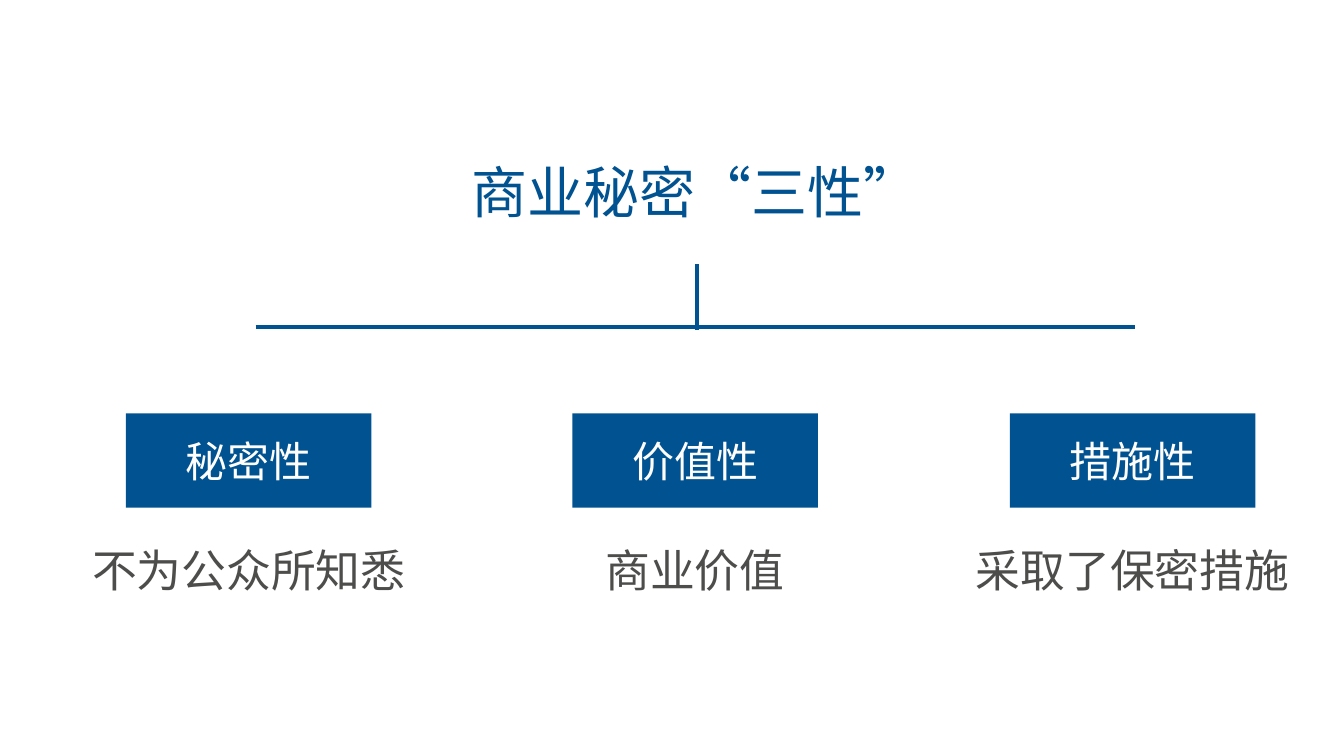
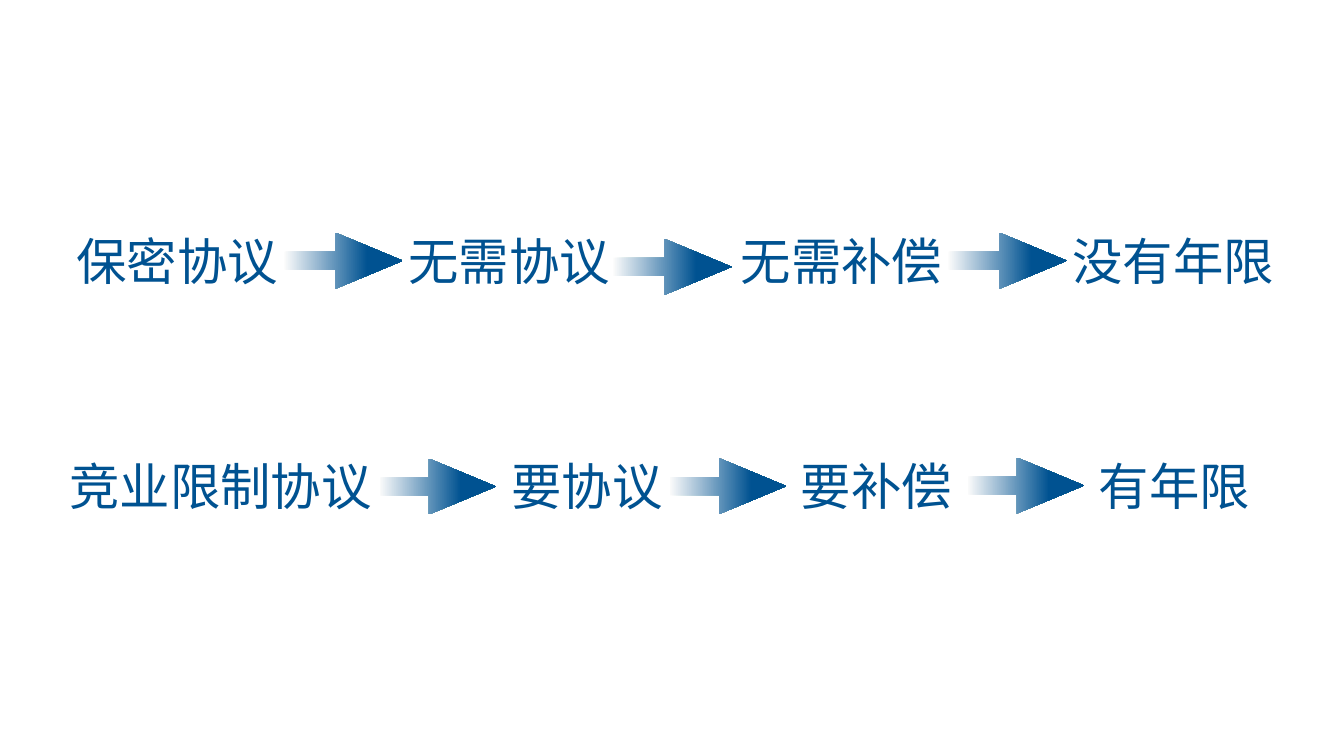
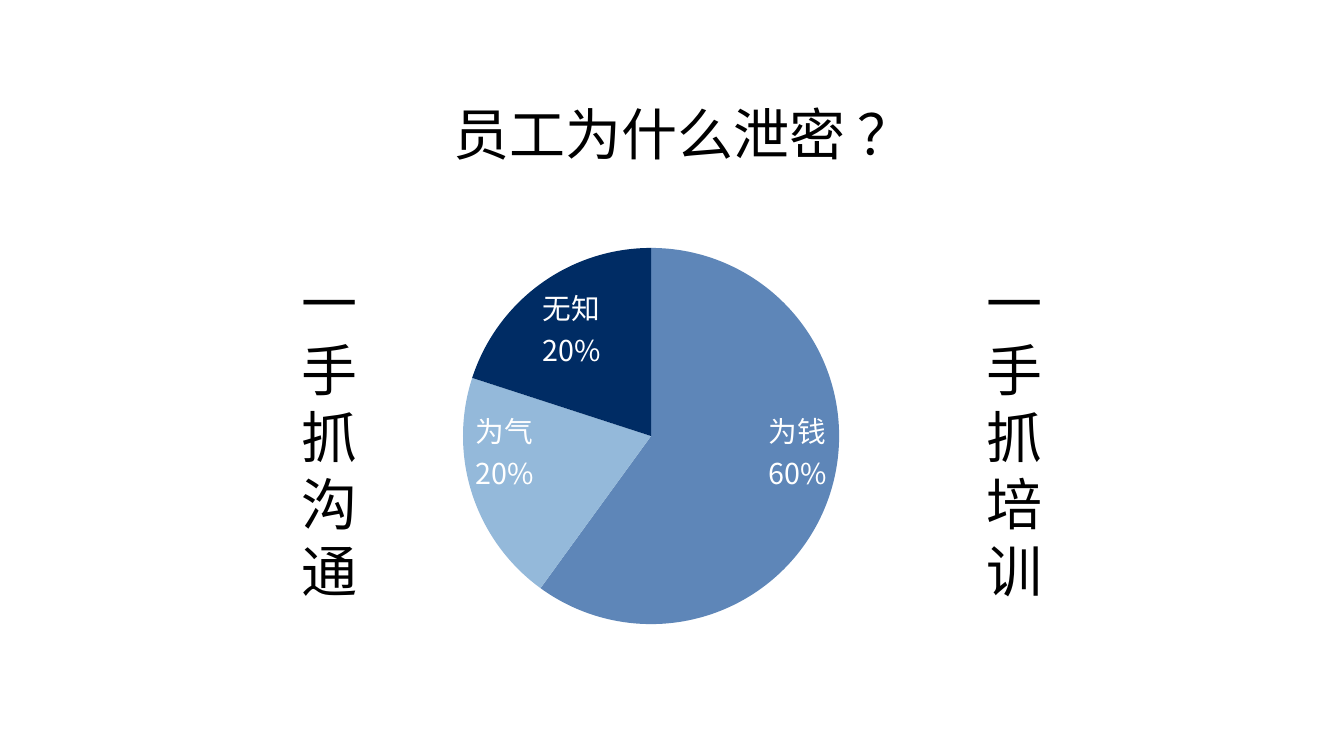
from lxml import etree
from pptx import Presentation
from pptx.chart.data import CategoryChartData
from pptx.dml.color import RGBColor
from pptx.enum.chart import XL_CHART_TYPE, XL_LABEL_POSITION
from pptx.enum.shapes import MSO_CONNECTOR, MSO_SHAPE
from pptx.enum.text import MSO_ANCHOR, MSO_AUTO_SIZE, PP_ALIGN
from pptx.oxml import parse_xml
from pptx.oxml.ns import nsdecls, qn
from pptx.util import Cm, Pt

PIE = XL_CHART_TYPE.PIE
INSIDE_END = XL_LABEL_POSITION.INSIDE_END
STRAIGHT = MSO_CONNECTOR.STRAIGHT
RECTANGLE, RIGHT_ARROW = MSO_SHAPE.RECTANGLE, MSO_SHAPE.RIGHT_ARROW
TOP, MIDDLE = MSO_ANCHOR.TOP, MSO_ANCHOR.MIDDLE
GROW = MSO_AUTO_SIZE.SHAPE_TO_FIT_TEXT
CENTER = PP_ALIGN.CENTER

FONT = "Noto Sans CJK SC"
BLUE = RGBColor(0x00, 0x52, 0x91)
GRAY = RGBColor(0x4D, 0x4E, 0x4C)
PALE = RGBColor(0xFB, 0xFB, 0xFB)
WHITE = RGBColor(0xFF, 0xFF, 0xFF)
BLACK = RGBColor(0x00, 0x00, 0x00)
PIE_COLORS = [RGBColor(0x5E, 0x86, 0xB8), RGBColor(0x94, 0xB9, 0xDA),
              RGBColor(0x00, 0x2C, 0x64)]


def set_font(font, size, color):
    """Format Latin and East Asian text alike."""
    font.size = Pt(size)
    font.bold = False
    font.color.rgb = color
    font.name = FONT
    etree.SubElement(font._rPr, qn("a:ea"), typeface=FONT)


def write(sp, box, lines, size, color, inset=0.1, anchor=MIDDLE, wrap=True, spacing=None):
    """Place a text shape (left, top, width, height in cm) and fill it."""
    sp.left, sp.top, sp.width, sp.height = [Cm(v) for v in box]
    tf = sp.text_frame
    tf.margin_left = tf.margin_right = tf.margin_top = tf.margin_bottom = Cm(inset)
    tf.vertical_anchor = anchor
    tf.word_wrap = wrap
    tf.auto_size = GROW
    for i, line in enumerate(lines):
        p = tf.paragraphs[0] if i == 0 else tf.add_paragraph()
        p.alignment = CENTER
        if spacing:
            p.line_spacing = Pt(spacing)
        r = p.add_run()
        r.text = line
        set_font(r.font, size, color)


prs = Presentation()
prs.slide_width, prs.slide_height = Cm(67.74), Cm(38.1)
TITLE_ONLY, BLANK = prs.slide_layouts[5], prs.slide_layouts[6]

# Slide 1: the three properties of a trade secret
slide = prs.slides.add_slide(TITLE_ONLY)
write(slide.shapes.title, (22.1, 8.13, 25.88, 3.05), ["商业秘密“三性”"], 80, BLUE)

# property, label left, meaning, meaning left, meaning width
properties = [
    ("秘密性", 6.35, "不为公众所知悉", 2.11, 20.85),
    ("价值性", 28.85, "商业价值", 28.35, 13.36),
    ("措施性", 50.9, "采取了保密措施", 48.54, 17.07),
]
for name, left, meaning, meaning_left, meaning_width in properties:
    label = slide.shapes.add_group_shape().shapes
    sp = label.add_shape(RECTANGLE, Cm(left), Cm(20.83), Cm(12.37), Cm(4.75))
    sp.shadow.inherit = False
    sp.fill.solid()
    sp.fill.fore_color.rgb = BLUE
    sp.line.fill.background()
    write(label.add_textbox(0, 0, 0, 0), (left, 21.95, 12.37, 2.51), [name], 60, WHITE, 0.2)
    write(slide.shapes.add_textbox(0, 0, 0, 0), (meaning_left, 27.48, meaning_width, 2.49),
          [meaning], 64, GRAY)

for ends in [(12.88, 16.48, 57.2, 16.48), (35.15, 16.61, 35.15, 13.31)]:
    line = slide.shapes.add_connector(STRAIGHT, *[Cm(v) for v in ends])
    line.line.color.rgb = BLUE
    line.line.width = Pt(6)
    etree.SubElement(line._element.spPr, qn("a:effectLst"))

# Slide 2: two kinds of agreement compared
slide = prs.slides.add_slide(BLANK)
# text top, arrow width, (text, left) steps, (left, top) of arrows
agreements = [
    (11.48, 5.97,
     [("保密协议", 3.71), ("无需协议", 20.45), ("无需补偿", 37.19), ("没有年限", 53.92)],
     [(14.33, 11.73), (30.91, 12.04), (47.8, 11.73)]),
    (22.83, 5.87,
     [("竞业限制协议", 3.35), ("要协议", 25.63), ("要补偿", 40.23), ("有年限", 55.25)],
     [(19.13, 23.11), (33.76, 23.09), (48.77, 23.06)]),
]
for text_top, arrow_width, steps, arrows in agreements:
    for text, left in steps:
        width = 2.54 * len(text) + 0.28
        write(slide.shapes.add_textbox(0, 0, 0, 0), (left, text_top, width, 3.78),
              [text], 72, BLUE, 0.13, TOP, wrap=False)
    for left, top in arrows:
        sp = slide.shapes.add_shape(RIGHT_ARROW, Cm(left), Cm(top), Cm(arrow_width), Cm(2.82))
        sp.adjustments[0], sp.adjustments[1] = 0.32, 1.2
        sp.shadow.inherit = False
        sp.line.fill.background()
        sp.fill.gradient()
        sp.fill.gradient_angle = 0
        for stop, color, position in zip(sp.fill.gradient_stops, (PALE, BLUE), (0, 0.7)):
            stop.color.rgb = color
            stop.position = position

# Slide 3: why employees leak
slide = prs.slides.add_slide(TITLE_ONLY)
write(slide.shapes.title, (22.63, 5.11, 23.65, 3.23), ["员工为什么泄密 ？"], 80, BLACK,
      0.2, wrap=False)

data = CategoryChartData()
data.categories = ["为钱", "为气", "无知"]
data.add_series("Series 1", (60, 20, 20))
chart = slide.shapes.add_chart(PIE, Cm(23.24), Cm(12.4), Cm(19.15), Cm(19.15), data).chart
chart.has_title = False
chart.has_legend = False
set_font(chart.font, 10, BLACK)

plot = chart.plots[0]
plot.vary_by_categories = True
for i, color in enumerate(PIE_COLORS):
    point = plot.series[0].points[i].format
    point.fill.solid()
    point.fill.fore_color.rgb = color
    point.line.fill.background()

labels = plot.series[0].data_labels
labels.show_value = False
labels.show_category_name = True
labels.show_percentage = True
labels.number_format = "#,##0%"
labels.number_format_is_linked = False
labels.position = INSIDE_END
set_font(labels.font, 41, WHITE)
separator = parse_xml(f"<c:separator {nsdecls('c')}>\n</c:separator>")
labels._element.find(qn("c:showBubbleSize")).addnext(separator)

plot_area = chart._chartSpace.find(".//" + qn("c:plotArea"))
layout = plot_area.find(qn("c:layout"))
if layout is None:
    layout = etree.Element(qn("c:layout"))
    plot_area.insert(0, layout)
manual = etree.SubElement(layout, qn("c:manualLayout"))
for tag, value in [("layoutTarget", "inner"), ("xMode", "edge"), ("yMode", "edge"),
                   ("x", "0.005"), ("y", "0.005"), ("w", "0.99"), ("h", "0.99")]:
    etree.SubElement(manual, qn("c:" + tag), val=value)

columns = slide.shapes.add_group_shape().shapes
for text, left in [("一手抓培训", 49.17), ("一手抓沟通", 14.66)]:
    write(columns.add_textbox(0, 0, 0, 0), (left, 11.91, 3.89, 20.14), text, 80, BLACK,
          0.2, wrap=False, spacing=96)

prs.save("out.pptx")
